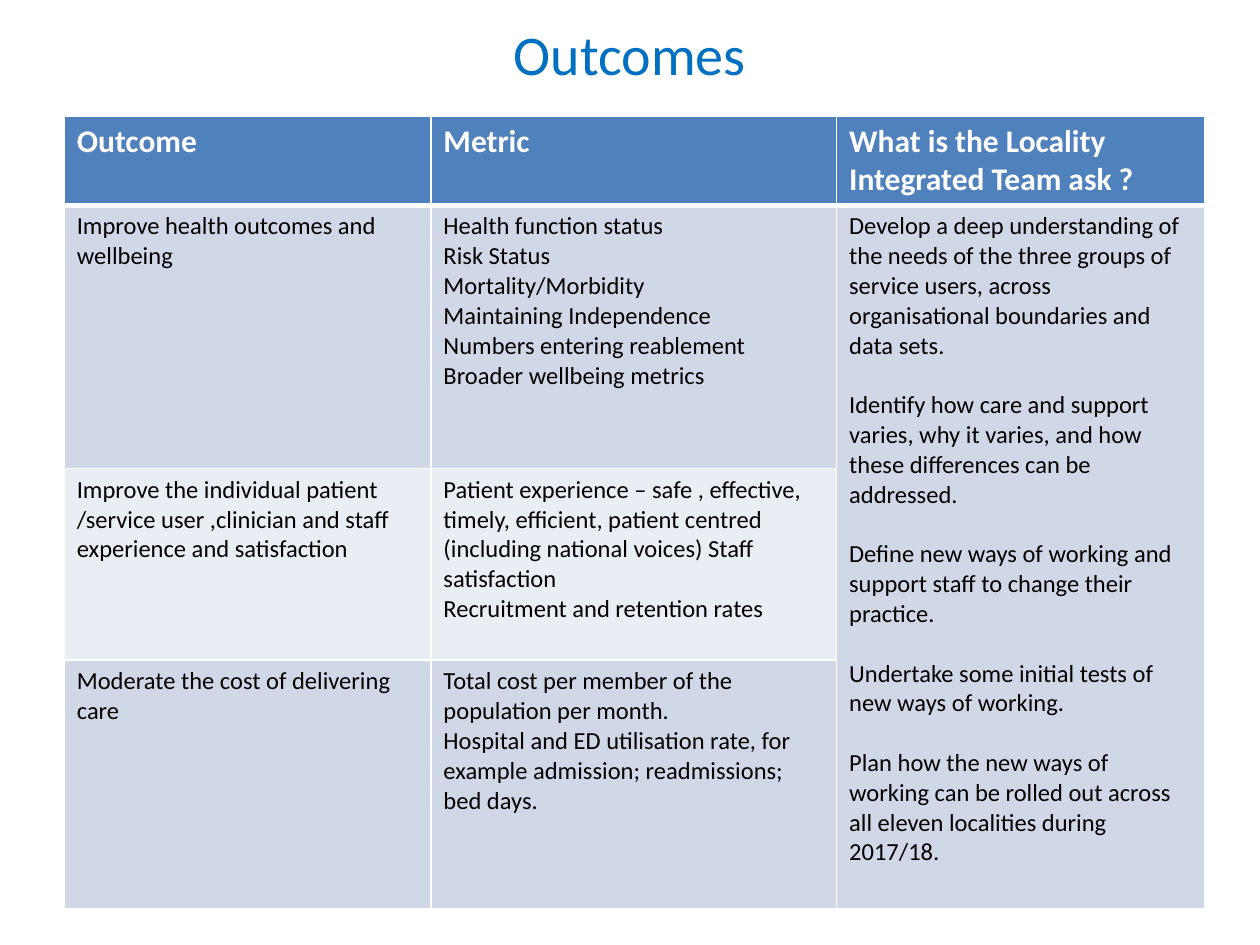
from lxml import etree
from pptx import Presentation
from pptx.dml.color import RGBColor
from pptx.enum.text import MSO_ANCHOR, PP_ALIGN
from pptx.oxml.ns import qn
from pptx.util import Inches, Pt

CENTER = PP_ALIGN.CENTER
MIDDLE = MSO_ANCHOR.MIDDLE
FONT = "Calibri"
WHITE = "FFFFFF"
COLUMN_WIDTHS = [2.91, 3.22, 2.92]
ROW_HEIGHTS = [0.71, 2.09, 1.52, 1.97]
ROW_FILLS = ["4F81BD", "D0D8E8", "E9EDF4", "D0D8E8"]
PARAGRAPH_GAP = 17

ROWS = [
    [["Outcome"], ["Metric"], ["What is the Locality Integrated Team ask ?"]],
    [
        ["Improve health outcomes and wellbeing"],
        [
            "Health function status",
            "Risk Status",
            "Mortality/Morbidity",
            "Maintaining Independence",
            "Numbers entering reablement",
            "Broader wellbeing metrics",
        ],
        [
            "Develop a deep understanding of the needs of the three groups of service users, "
            "across organisational boundaries and data sets.",
            "Identify how care and support varies, why it varies, and how these differences "
            "can be addressed.",
            "Define new ways of working and support staff to change their practice.",
            "Undertake some initial tests of new ways of working.",
            "Plan how the new ways of working can be rolled out across all eleven localities "
            "during 2017/18.",
        ],
    ],
    [
        ["Improve the individual patient /service user ,clinician and staff experience "
         "and satisfaction"],
        [
            "Patient experience – safe , effective, timely, efficient, patient centred "
            "(including national voices) Staff satisfaction",
            "Recruitment and retention rates",
        ],
        [],
    ],
    [
        ["Moderate the cost of delivering care"],
        [
            "Total cost per member of the population per month.",
            "Hospital and ED utilisation rate, for example admission; readmissions; bed days.",
        ],
        [],
    ],
]


def write_paragraphs(text_frame, lines, size, color, bold=False, gap=0):
    for index, line in enumerate(lines):
        paragraph = text_frame.paragraphs[0] if index == 0 else text_frame.add_paragraph()
        if index < len(lines) - 1:
            paragraph.space_after = Pt(gap)
        run = paragraph.add_run()
        run.text = line
        run.font.name = FONT
        run.font.size = Pt(size)
        run.font.bold = bold
        run.font.color.rgb = RGBColor.from_string(color)


def add_border(cell, side, points):
    line = etree.SubElement(cell._tc.get_or_add_tcPr(), qn("a:ln" + side), w=str(Pt(points)))
    solid = etree.SubElement(line, qn("a:solidFill"))
    etree.SubElement(solid, qn("a:srgbClr"), val=WHITE)


presentation = Presentation()
presentation.slide_width = Inches(10)
presentation.slide_height = Inches(7.5)
slide = presentation.slides.add_slide(presentation.slide_layouts[6])

title = slide.shapes.add_textbox(Inches(0.5), 0, Inches(9), Inches(0.84))
title.text_frame.word_wrap = True
title.text_frame.vertical_anchor = MIDDLE
write_paragraphs(title.text_frame, ["Outcomes"], 32, "0070C0")
title.text_frame.paragraphs[0].alignment = CENTER

table = slide.shapes.add_table(
    len(ROWS), len(COLUMN_WIDTHS), Inches(0.51), Inches(0.92),
    Inches(sum(COLUMN_WIDTHS)), Inches(sum(ROW_HEIGHTS)),
).table
for column, width in zip(table.columns, COLUMN_WIDTHS):
    column.width = Inches(width)
for row, height in zip(table.rows, ROW_HEIGHTS):
    row.height = Inches(height)
table.cell(1, 2).merge(table.cell(3, 2))

for row_index, row_texts in enumerate(ROWS):
    is_header = row_index == 0
    for column_index, lines in enumerate(row_texts):
        cell = table.cell(row_index, column_index)
        for side in "LRTB":
            thick = (is_header and side == "B") or (row_index == 1 and side == "T")
            add_border(cell, side, 3 if thick else 1)
        cell.fill.solid()
        cell.fill.fore_color.rgb = RGBColor.from_string(ROW_FILLS[row_index])
        write_paragraphs(
            cell.text_frame, lines,
            size=18 if is_header else 14,
            color=WHITE if is_header else "000000",
            bold=is_header,
            gap=PARAGRAPH_GAP if column_index == 2 else 0,
        )

presentation.save("out.pptx")
